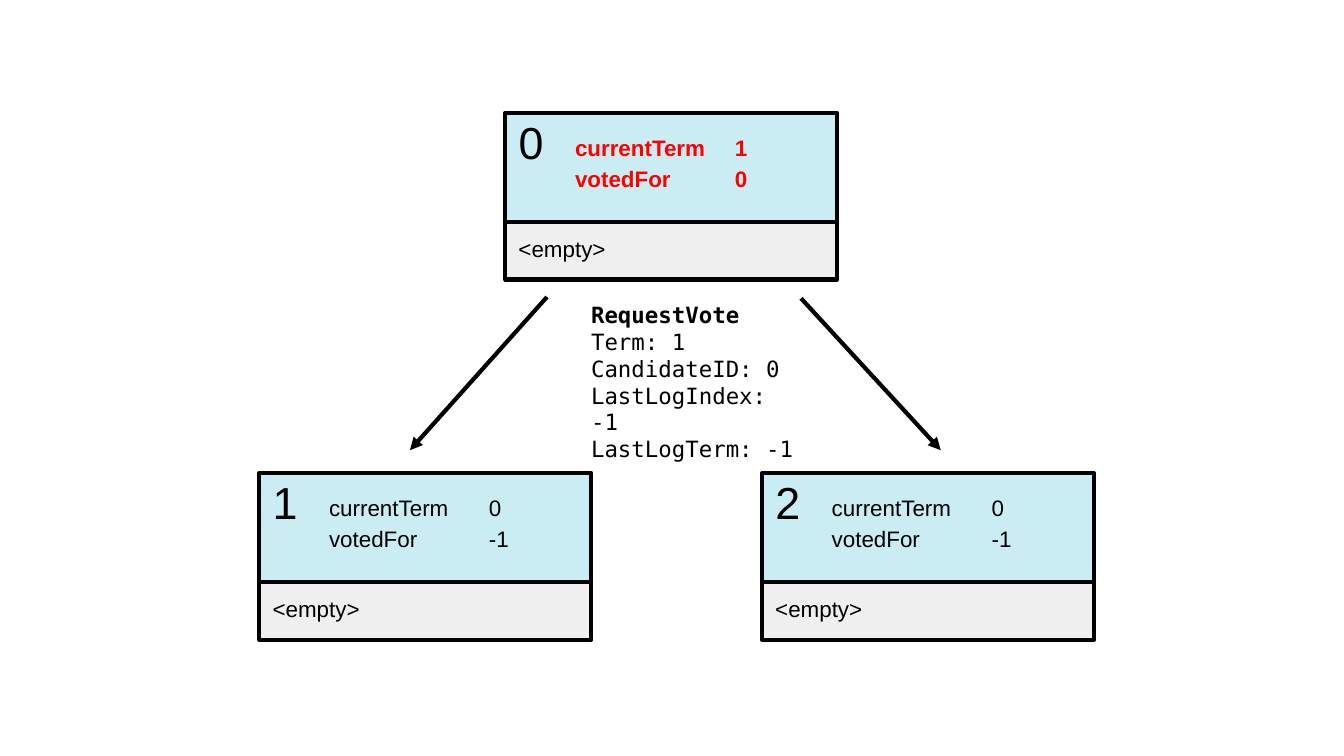
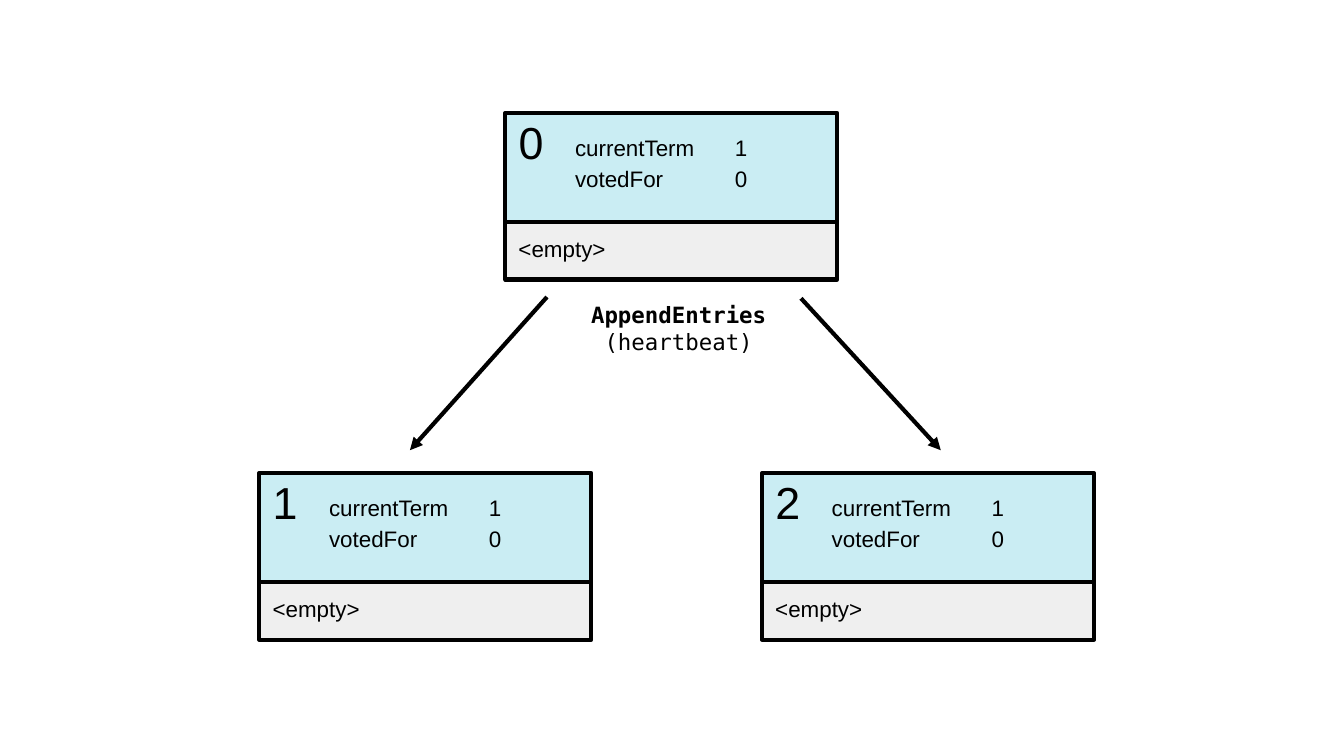
from lxml.etree import SubElement
from pptx import Presentation
from pptx.dml.color import RGBColor
from pptx.enum.shapes import MSO_CONNECTOR, MSO_SHAPE
from pptx.enum.text import MSO_ANCHOR, PP_ALIGN
from pptx.oxml.ns import qn
from pptx.util import Inches, Pt

BLACK, RED, BLUE, GREY = "000000", "FF0000", "CAEDF3", "EFEFEF"
SANS, MONO = "Arial", "DejaVu Sans Mono"
NODE_W, STATE_H, LOG_H = 2.47, 0.81, 0.43
NODES = [(3.76, 0.84), (1.93, 3.52), (5.67, 3.52)]
ARROWS = [(4.07, 2.21, 3.05, 3.35), (5.96, 2.22, 7, 3.35)]


def color(value):
    return RGBColor.from_string(value)


def add_text(shapes, at, text, fill=None, size=12, font=SANS, ink=BLACK,
             bold=False, bold_first=False, spacing=None):
    box = [Inches(v) for v in at]
    if fill:
        sp = shapes.add_shape(MSO_SHAPE.RECTANGLE, *box)
        sp.shadow.inherit = False
        sp.fill.solid()
        sp.fill.fore_color.rgb = color(fill)
        sp.line.color.rgb = color(BLACK)
        sp.line.width = Pt(2.25)
    else:
        sp = shapes.add_textbox(*box)
    tf = sp.text_frame
    tf.word_wrap = True
    tf.vertical_anchor = MSO_ANCHOR.TOP
    tf.margin_left = tf.margin_right = tf.margin_top = tf.margin_bottom = Inches(0.1)
    for i, line in enumerate(text.splitlines()):
        p = tf.add_paragraph() if i else tf.paragraphs[0]
        p.alignment = PP_ALIGN.LEFT
        p.line_spacing = spacing
        r = p.add_run()
        r.text = line
        r.font.name = font
        r.font.size = Pt(size)
        r.font.bold = bold or (bold_first and i == 0)
        r.font.color.rgb = color(ink)


slides = [
    {
        "values": ["1\n0", "0\n-1", "0\n-1"],
        "changed": [0],
        "message": "RequestVote\nTerm: 1\nCandidateID: 0\nLastLogIndex: -1\nLastLogTerm: -1",
    },
    {
        "values": ["1\n0"] * 3,
        "changed": [],
        "message": "AppendEntries\n (heartbeat)",
    },
]

prs = Presentation()
prs.slide_width = Inches(10)
prs.slide_height = Inches(10 * 9 / 16)

for content in slides:
    s = prs.slides.add_slide(prs.slide_layouts[6])

    for node, (x, y) in enumerate(NODES):
        shapes = s.shapes.add_group_shape().shapes
        changed = node in content["changed"]
        state = {"ink": RED if changed else BLACK, "bold": changed, "spacing": 1.15}
        add_text(shapes, (x, y, NODE_W, STATE_H), "", fill=BLUE)
        add_text(shapes, (x + 0.42, y + 0.03, 1.28, 0.66), "currentTerm\nvotedFor", **state)
        add_text(shapes, (x, y + STATE_H, NODE_W, LOG_H), "<empty>", fill=GREY)
        add_text(shapes, (x, y - 0.09, 0.71, 0.59), str(node), size=24)
        add_text(shapes, (x + 1.61, y + 0.03, 0.77, 0.66), content["values"][node], **state)

    shapes = s.shapes.add_group_shape().shapes
    for arrow in ARROWS:
        line = shapes.add_connector(MSO_CONNECTOR.STRAIGHT, *[Inches(v) for v in arrow])
        line.line.color.rgb = color(BLACK)
        line.line.width = Pt(2.25)
        props = line._element.spPr
        SubElement(props.find(qn("a:ln")), qn("a:tailEnd"), type="triangle")
        SubElement(props, qn("a:effectLst"))
    add_text(shapes, (4.3, 2.14, 1.73, 1.19), content["message"], font=MONO, bold_first=True)

prs.save("out.pptx")
